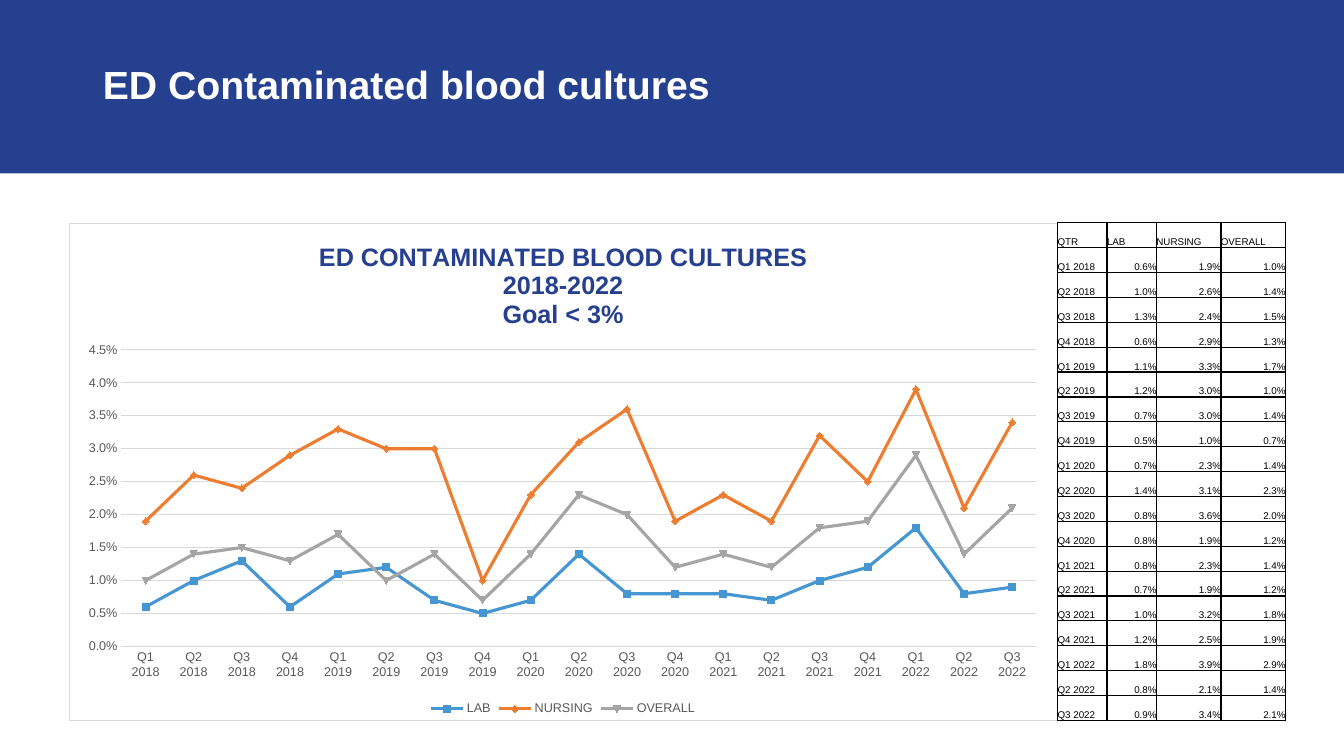
from lxml.etree import SubElement
from pptx import Presentation
from pptx.chart.data import CategoryChartData
from pptx.dml.color import RGBColor
from pptx.enum.chart import XL_CHART_TYPE, XL_LEGEND_POSITION, XL_TICK_MARK
from pptx.enum.shapes import MSO_SHAPE
from pptx.enum.text import MSO_ANCHOR, PP_ALIGN
from pptx.oxml import parse_xml
from pptx.oxml.ns import nsdecls, qn
from pptx.util import Inches, Pt

# Content
TITLE = "ED Contaminated blood cultures"
CHART_TITLE = "ED CONTAMINATED BLOOD CULTURES\n2018-2022\nGoal < 3%"
QUARTERS = [f"Q{quarter} {year}" for year in range(2018, 2023) for quarter in range(1, 5)][:19]
RATES = {  # percent
    "LAB": [0.6, 1.0, 1.3, 0.6, 1.1, 1.2, 0.7, 0.5, 0.7, 1.4,
            0.8, 0.8, 0.8, 0.7, 1.0, 1.2, 1.8, 0.8, 0.9],
    "NURSING": [1.9, 2.6, 2.4, 2.9, 3.3, 3.0, 3.0, 1.0, 2.3, 3.1,
                3.6, 1.9, 2.3, 1.9, 3.2, 2.5, 3.9, 2.1, 3.4],
    "OVERALL": [1.0, 1.4, 1.5, 1.3, 1.7, 1.0, 1.4, 0.7, 1.4, 2.3,
                2.0, 1.2, 1.4, 1.2, 1.8, 1.9, 2.9, 1.4, 2.1],
}
LINE_COLORS = ["4696D2", "ED7D31", "A5A5A5"]
BLUE, CHART_BLUE, GREY, PALE = "25408F", "26408F", "595959", "D9D9D9"

# Layout in inches
WIDTH, HEIGHT, BANNER_HEIGHT = 13.33, 7.5, 1.72
TOP, BODY_HEIGHT = 2.21, 4.94
CHART_LEFT, CHART_WIDTH = 0.68, 9.81
COLUMN_WIDTHS = [0.49, 0.49, 0.64, 0.64]
PLOT_SHARES = {"x": 0.053, "y": 0.255, "w": 0.926, "h": 0.597}


def color(value):
    return RGBColor.from_string(value)


def style(font, size, value, bold=False):
    font.name, font.size, font.bold = "Arial", Pt(size), bold
    font.color.rgb = color(value)


def style_line(line, value, width):
    line.color.rgb = color(value)
    line.width = Pt(width)


def add_borders(cell):
    properties = cell._tc.get_or_add_tcPr()
    for side in ("lnL", "lnR", "lnT", "lnB"):
        properties.append(parse_xml(
            f'<a:{side} {nsdecls("a")} w="12700"><a:solidFill>'
            f'<a:srgbClr val="000000"/></a:solidFill></a:{side}>'))


def add_banner_and_title(slide):
    title = slide.shapes.title
    title.left, title.top = Inches(0.92), Inches(0.14)
    title.width, title.height = Inches(11.5), Inches(1.45)
    frame = title.text_frame
    frame.text = TITLE
    frame.vertical_anchor = MSO_ANCHOR.MIDDLE
    paragraph = frame.paragraphs[0]
    paragraph.alignment, paragraph.line_spacing = PP_ALIGN.LEFT, 0.9
    style(paragraph.runs[0].font, 28, "FFFFFF", True)

    banner = slide.shapes.add_shape(MSO_SHAPE.RECTANGLE, 0, 0, Inches(WIDTH), Inches(BANNER_HEIGHT))
    banner.shadow.inherit = False
    banner.fill.solid()
    banner.fill.fore_color.rgb = color(BLUE)
    banner.line.fill.background()
    title._element.addprevious(banner._element)


def add_rate_chart(slide):
    data = CategoryChartData(number_format="0.0%")
    data.categories = QUARTERS
    for name, rates in RATES.items():
        data.add_series(name, [round(rate / 100, 4) for rate in rates])
    chart = slide.shapes.add_chart(
        XL_CHART_TYPE.LINE, Inches(CHART_LEFT), Inches(TOP),
        Inches(CHART_WIDTH), Inches(BODY_HEIGHT), data).chart
    style(chart.font, 10, "000000")

    # Title and legend
    frame = chart.chart_title.text_frame
    frame.text = CHART_TITLE
    for paragraph in frame.paragraphs:
        style(paragraph.runs[0].font, 18, CHART_BLUE, True)
    chart.chart_title.include_in_layout = False
    chart.has_legend = True
    chart.legend.position = XL_LEGEND_POSITION.BOTTOM
    chart.legend.include_in_layout = False
    style(chart.legend.font, 9, GREY)

    # Axes
    for axis in (chart.category_axis, chart.value_axis):
        axis.major_tick_mark = axis.minor_tick_mark = XL_TICK_MARK.NONE
        style(axis.tick_labels.font, 9, GREY)
    style_line(chart.category_axis.format.line, PALE, 0.75)
    values = chart.value_axis
    values.minimum_scale, values.maximum_scale, values.major_unit = 0, 0.045, 0.005
    values.format.line.fill.background()
    style_line(values.major_gridlines.format.line, PALE, 0.75)
    values.tick_labels.number_format = "0.0%"
    values.tick_labels.number_format_is_linked = False

    # Lines
    chart.plots[0].vary_by_categories = False
    for series, line_color in zip(chart.plots[0].series, LINE_COLORS):
        series.smooth = False
        series.marker.style = None
        style_line(series.format.line, line_color, 2.25)

    # Plot position and chart frame
    plot_area = chart._chartSpace.find(".//" + qn("c:plotArea"))
    for old_layout in plot_area.findall(qn("c:layout")):
        plot_area.remove(old_layout)
    layout = parse_xml(f'<c:layout {nsdecls("c")}><c:manualLayout/></c:layout>')
    settings = {"layoutTarget": "inner", "xMode": "edge", "yMode": "edge", **PLOT_SHARES}
    for name, value in settings.items():
        SubElement(layout[0], qn(f"c:{name}")).set("val", str(value))
    plot_area.insert(0, layout)
    chart._chartSpace.find(qn("c:txPr")).addprevious(parse_xml(
        f'<c:spPr {nsdecls("c", "a")}><a:solidFill><a:srgbClr val="FFFFFF"/></a:solidFill>'
        f'<a:ln w="9525"><a:solidFill><a:srgbClr val="{PALE}"/></a:solidFill></a:ln></c:spPr>'))


def add_rate_table(slide):
    rows = [["QTR", *RATES]]
    for quarter, *rates in zip(QUARTERS, *RATES.values()):
        rows.append([quarter, *(f"{rate:.1f}%" for rate in rates)])
    table = slide.shapes.add_table(
        len(rows), len(COLUMN_WIDTHS), Inches(CHART_LEFT + CHART_WIDTH), Inches(TOP),
        Inches(sum(COLUMN_WIDTHS)), Inches(BODY_HEIGHT)).table
    table.first_row = table.horz_banding = False
    for column, width in zip(table.columns, COLUMN_WIDTHS):
        column.width = Inches(width)
    for row_index, row in enumerate(rows):
        for column_index, text in enumerate(row):
            cell = table.cell(row_index, column_index)
            cell.margin_left = cell.margin_right = cell.margin_top = cell.margin_bottom = 0
            cell.vertical_anchor = MSO_ANCHOR.BOTTOM
            add_borders(cell)
            cell.fill.background()
            cell.text_frame.text = text
            paragraph = cell.text_frame.paragraphs[0]
            is_rate = row_index > 0 and column_index > 0
            paragraph.alignment = PP_ALIGN.RIGHT if is_rate else PP_ALIGN.LEFT
            style(paragraph.runs[0].font, 7, "000000")


def main():
    presentation = Presentation()
    presentation.slide_width, presentation.slide_height = Inches(WIDTH), Inches(HEIGHT)
    slide = presentation.slides.add_slide(presentation.slide_layouts[5])
    add_banner_and_title(slide)
    add_rate_chart(slide)
    add_rate_table(slide)
    presentation.save("out.pptx")


if __name__ == "__main__":
    main()
